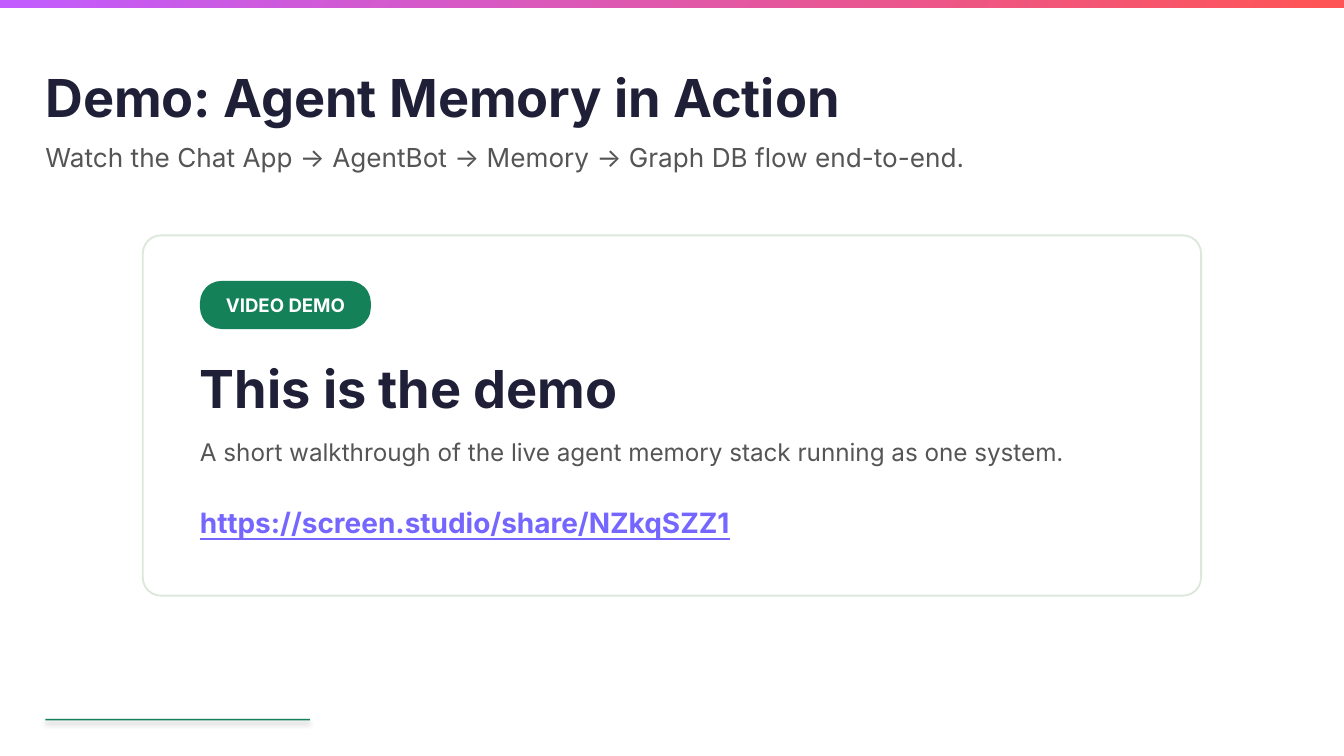
"""Build the agent memory demo slide."""
from typing import NamedTuple

from lxml.etree import SubElement
from pptx import Presentation
from pptx.dml.color import RGBColor
from pptx.enum.shapes import MSO_SHAPE
from pptx.enum.text import MSO_ANCHOR, PP_ALIGN
from pptx.oxml.ns import qn
from pptx.shapes.autoshape import Shape
from pptx.slide import Slide
from pptx.util import Cm, Pt

INK = RGBColor(0x1F, 0x20, 0x37)
GREY = RGBColor(0x55, 0x55, 0x55)
GREEN = RGBColor(0x15, 0x81, 0x58)
PALE_GREEN = RGBColor(0xDD, 0xE8, 0xDD)
VIOLET = RGBColor(0x74, 0x66, 0xFF)
PURPLE = RGBColor(0xC1, 0x5C, 0xFF)
CORAL = RGBColor(0xFF, 0x54, 0x54)
WHITE = RGBColor(0xFF, 0xFF, 0xFF)

FONT = "Inter"
PAGE_WIDTH, PAGE_HEIGHT = 25.4, 14.29
MARGIN = 0.86
CARD_LEFT, CARD_WIDTH = 2.7, PAGE_WIDTH - 2 * 2.7
INNER_LEFT = 3.78
TITLE_WIDTH = PAGE_WIDTH - 2 * MARGIN
INNER_WIDTH = PAGE_WIDTH - 2 * INNER_LEFT


class Area(NamedTuple):
    left: float
    top: float
    width: float
    height: float


class Style(NamedTuple):
    size: float
    color: RGBColor
    bold: bool = False
    underline: bool = False


class Label(NamedTuple):
    text: str
    area: Area
    style: Style


HEADING = Style(28, INK, bold=True)
LABELS = [
    Label("Demo: Agent Memory in Action", Area(MARGIN, 1.24, TITLE_WIDTH, 1.17), HEADING),
    Label("Watch the Chat App → AgentBot → Memory → Graph DB flow end-to-end.",
          Area(MARGIN, 2.67, TITLE_WIDTH, 0.84), Style(14, GREY)),
    Label("This is the demo", Area(INNER_LEFT, 6.73, INNER_WIDTH, 1.45), HEADING),
    Label("A short walkthrough of the live agent memory stack running as one system.",
          Area(INNER_LEFT, 8.26, INNER_WIDTH, 0.99), Style(13, GREY)),
    Label("https://screen.studio/share/NZkqSZZ1",
          Area(INNER_LEFT, 9.55, INNER_WIDTH, 0.89),
          Style(15, VIOLET, bold=True, underline=True)),
]


def write(shape: Shape, text: str, style: Style, inset: float = 0) -> None:
    frame = shape.text_frame
    frame.text = text
    frame.word_wrap = True
    frame.margin_left = frame.margin_right = Cm(inset)
    frame.margin_top = frame.margin_bottom = Cm(inset)
    font = frame.paragraphs[0].runs[0].font
    font.name = FONT
    font.size = Pt(style.size)
    font.bold = style.bold
    font.underline = style.underline
    font.color.rgb = style.color


def add_label(page: Slide, label: Label) -> None:
    box = page.shapes.add_textbox(*map(Cm, label.area))
    write(box, label.text, label.style)


def add_block(page: Slide, kind: MSO_SHAPE, area: Area, fill: RGBColor) -> Shape:
    block = page.shapes.add_shape(kind, *map(Cm, area))
    block.shadow.inherit = False
    block.fill.solid()
    block.fill.fore_color.rgb = fill
    block.line.fill.background()
    return block


def add_top_bar(page: Slide) -> None:
    bar = add_block(page, MSO_SHAPE.RECTANGLE, Area(0, 0, PAGE_WIDTH, 0.15), PURPLE)
    bar.fill.gradient()
    bar.fill.gradient_angle = 315
    for stop, color in zip(bar.fill.gradient_stops, (PURPLE, CORAL)):
        stop.color.rgb = color


def add_card(page: Slide) -> None:
    card = add_block(page, MSO_SHAPE.ROUNDED_RECTANGLE,
                     Area(CARD_LEFT, 4.45, CARD_WIDTH, 6.81), WHITE)
    card.adjustments[0] = 0.05
    card.line.color.rgb = PALE_GREEN
    card.line.width = Pt(1)


def add_badge(page: Slide) -> None:
    badge = add_block(page, MSO_SHAPE.ROUNDED_RECTANGLE,
                      Area(INNER_LEFT, 5.31, 3.23, 0.91), GREEN)
    badge.adjustments[0] = 0.45
    write(badge, "VIDEO DEMO", Style(10, WHITE, bold=True), inset=0.05)
    badge.text_frame.vertical_anchor = MSO_ANCHOR.MIDDLE
    badge.text_frame.paragraphs[0].alignment = PP_ALIGN.CENTER


def add_footer_rule(page: Slide) -> None:
    rule = add_block(page, MSO_SHAPE.RECTANGLE, Area(MARGIN, 13.59, 5, 0.03), GREEN)
    effects = rule._element.spPr.find(qn("a:effectLst"))
    shadow = SubElement(effects, qn("a:outerShdw"), blurRad=str(Pt(3.1)),
                        dist=str(Pt(1.8)), dir="5400000", rotWithShape="0")
    color = SubElement(shadow, qn("a:srgbClr"), val="000000")
    SubElement(color, qn("a:alpha"), val="35000")


def main() -> None:
    deck = Presentation()
    deck.slide_width, deck.slide_height = Cm(PAGE_WIDTH), Cm(PAGE_HEIGHT)
    page = deck.slides.add_slide(deck.slide_layouts[6])
    page.background.fill.solid()
    page.background.fill.fore_color.rgb = WHITE
    add_top_bar(page)
    add_card(page)
    add_badge(page)
    for label in LABELS:
        add_label(page, label)
    add_footer_rule(page)
    deck.save("out.pptx")


if __name__ == "__main__":
    main()
